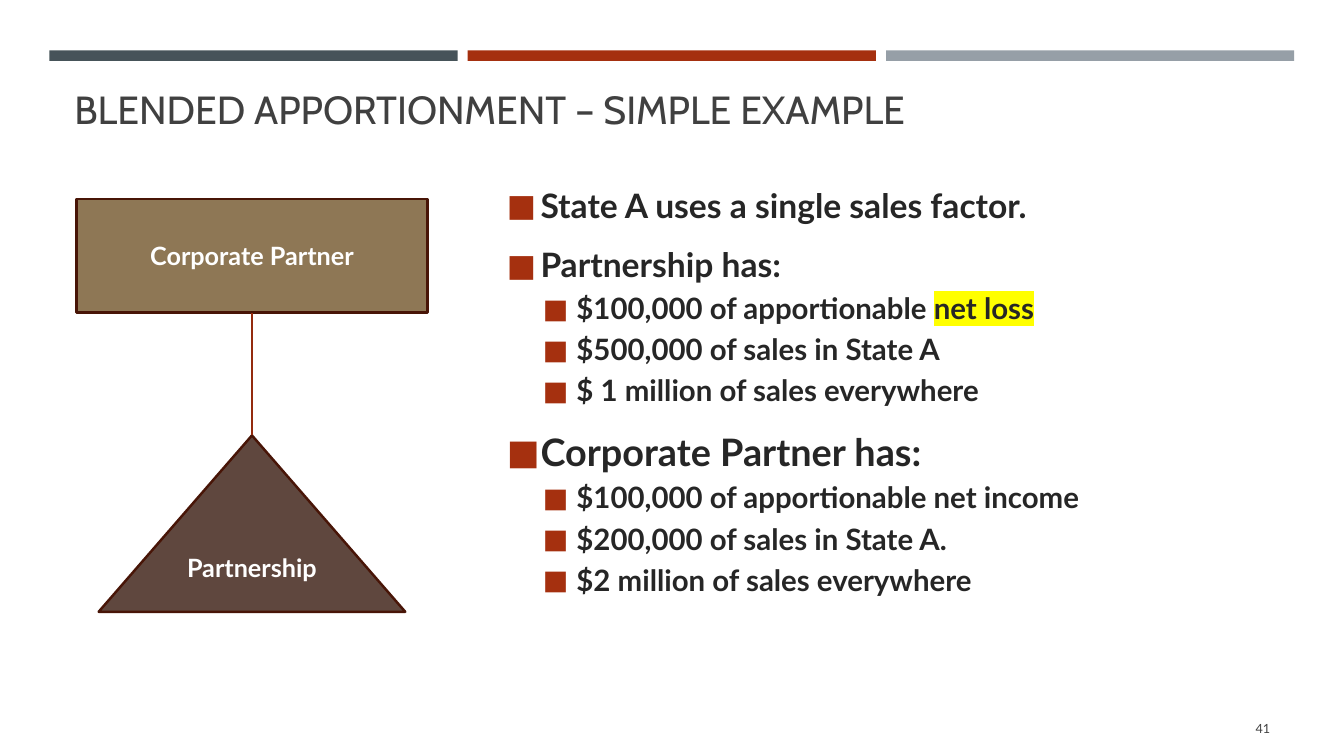
from pptx import Presentation
from pptx.dml.color import RGBColor
from pptx.enum.shapes import MSO_CONNECTOR, MSO_SHAPE
from pptx.enum.text import MSO_ANCHOR as Anchor, PP_ALIGN as Align
from pptx.oxml.ns import qn
from pptx.util import Pt
from lxml.etree import SubElement
from dataclasses import dataclass

TITLE = "BLENDED APPORTIONMENT – SIMPLE EXAMPLE"
PAGE_NUMBER = "41"
HIGHLIGHTED = "net loss"
# (heading, heading size, details)
FACTS = [
    ("State A uses a single sales factor.", 24, []),
    ("Partnership has:", 24, [
        "$100,000 of apportionable net loss",
        "$500,000 of sales in State A",
        "$ 1 million of sales everywhere",
    ]),
    ("Corporate Partner has:", 27, [
        "$100,000 of apportionable net income",
        "$200,000 of sales in State A.",
        "$2 million of sales everywhere",
    ]),
]


@dataclass(frozen=True)
class Theme:
    bars: tuple = ("465359", "A5300F", "969FA7")
    title: str = "404040"
    body: str = "262626"
    bullet: str = "A5300F"
    highlight: str = "FFFF00"
    partner: str = "8E7755"
    partnership: str = "5F473E"
    outline: str = "481507"
    link: str = "942B0E"
    label: str = "FFFFFF"
    heading_font: str = "Cabin"
    body_font: str = "Lato"
    title_size: int = 28
    detail_size: int = 21
    label_size: int = 18
    number_size: int = 9


THEME = Theme()


def rgb(code):
    return RGBColor.from_string(code)


def style(run, size, color, font=THEME.body_font, bold=False):
    run.font.size = Pt(size)
    run.font.color.rgb = rgb(color)
    run.font.name = font
    run.font.bold = bold


def add_block(shapes, preset, box, fill, outline=None):
    block = shapes.add_shape(preset, *map(Pt, box))
    block.shadow.inherit = False
    block.fill.solid()
    block.fill.fore_color.rgb = rgb(fill)
    if outline:
        block.line.color.rgb = rgb(outline)
        block.line.width = Pt(1.75)
    else:
        block.line.fill.background()
    return block


def add_party(shapes, name, preset, box, fill):
    """Add one labelled entity of the ownership diagram."""
    party = add_block(shapes, preset, box, fill, THEME.outline)
    frame = party.text_frame
    frame.text = name
    frame.vertical_anchor = Anchor.MIDDLE
    label = frame.paragraphs[0]
    label.alignment = Align.CENTER
    style(label.runs[0], THEME.label_size, THEME.label, bold=True)
    return party


def add_frame(slide, box, anchor):
    frame = slide.shapes.add_textbox(*map(Pt, box)).text_frame
    frame.word_wrap = True
    frame.vertical_anchor = anchor
    return frame


def add_bullet(paragraph, indent):
    props = paragraph._p.get_or_add_pPr()
    props.set("marL", str(Pt(indent)))
    props.set("indent", str(-Pt(24)))
    color = SubElement(props, qn("a:buClr"))
    SubElement(color, qn("a:srgbClr"), val=THEME.bullet)
    SubElement(props, qn("a:buSzPct"), val="92000")
    SubElement(props, qn("a:buFont"), typeface=THEME.body_font)
    SubElement(props, qn("a:buChar"), char="■")


def highlight(run):
    mark = SubElement(run._r.rPr, qn("a:highlight"))
    SubElement(mark, qn("a:srgbClr"), val=THEME.highlight)
    run._r.rPr.find(qn("a:latin")).addprevious(mark)


def write_fact(paragraph, text, size, level, after):
    before, found, rest = text.partition(HIGHLIGHTED)
    for part in filter(None, (before, found, rest)):
        run = paragraph.add_run()
        run.text = part
        style(run, size, THEME.body, bold=True)
        if part == HIGHLIGHTED:
            highlight(run)
    paragraph.level = level
    paragraph.line_spacing = 1.0 if level else 1.1
    paragraph.space_before = Pt(0.2 * size)
    paragraph.space_after = Pt(after)
    add_bullet(paragraph, 49.7 if level else 24)


def add_bars(slide):
    left, width, pitch = 35.3, 291.6, 298.8
    for column, color in enumerate(THEME.bars):
        add_block(slide.shapes, MSO_SHAPE.RECTANGLE,
                  (left + column * pitch, 36, width, 7.5), color)


def add_facts(slide):
    frame = add_frame(slide, (355, 116.6, 559.4, 354.2), Anchor.MIDDLE)
    frame.margin_bottom = Pt(35.5)
    lines = []
    for heading, size, details in FACTS:
        lines.append((heading, size, 0, 0 if details else 6))
        for detail in details:
            after = 6 if detail == details[-1] else 0
            lines.append((detail, THEME.detail_size, 1, after))
    for index, line in enumerate(lines):
        paragraph = frame.add_paragraph() if index else frame.paragraphs[0]
        write_fact(paragraph, *line)


def add_diagram(slide):
    shapes = slide.shapes.add_group_shape().shapes
    center = 180

    def centered(top, width, height):
        return center - width / 2, top, width, height

    partnership = add_party(shapes, "Partnership", MSO_SHAPE.ISOSCELES_TRIANGLE,
                            centered(311, 219, 126), THEME.partnership)
    partner = add_party(shapes, "Corporate Partner", MSO_SHAPE.RECTANGLE,
                        centered(142, 251, 81.4), THEME.partner)
    link = shapes.add_connector(MSO_CONNECTOR.STRAIGHT, 0, 0, 0, 0)
    link.begin_connect(partner, 2)
    link.end_connect(partnership, 0)
    link.line.color.rgb = rgb(THEME.link)
    link.line.width = Pt(1)
    SubElement(link._element.spPr, qn("a:effectLst"))


def main():
    deck = Presentation()
    deck.slide_width, deck.slide_height = Pt(960), Pt(540)
    slide = deck.slides.add_slide(deck.slide_layouts[6])

    add_bars(slide)
    title = add_frame(slide, (46.1, 55.4, 868.3, 42.5), Anchor.BOTTOM)
    title.text = TITLE
    style(title.paragraphs[0].runs[0], THEME.title_size, THEME.title, THEME.heading_font)
    add_facts(slide)

    number = add_frame(slide, (831.6, 506.2, 82.8, 28.8), Anchor.MIDDLE)
    number.text = PAGE_NUMBER
    number.paragraphs[0].alignment = Align.RIGHT
    style(number.paragraphs[0].runs[0], THEME.number_size, THEME.title)

    add_diagram(slide)
    deck.save("out.pptx")


if __name__ == "__main__":
    main()
